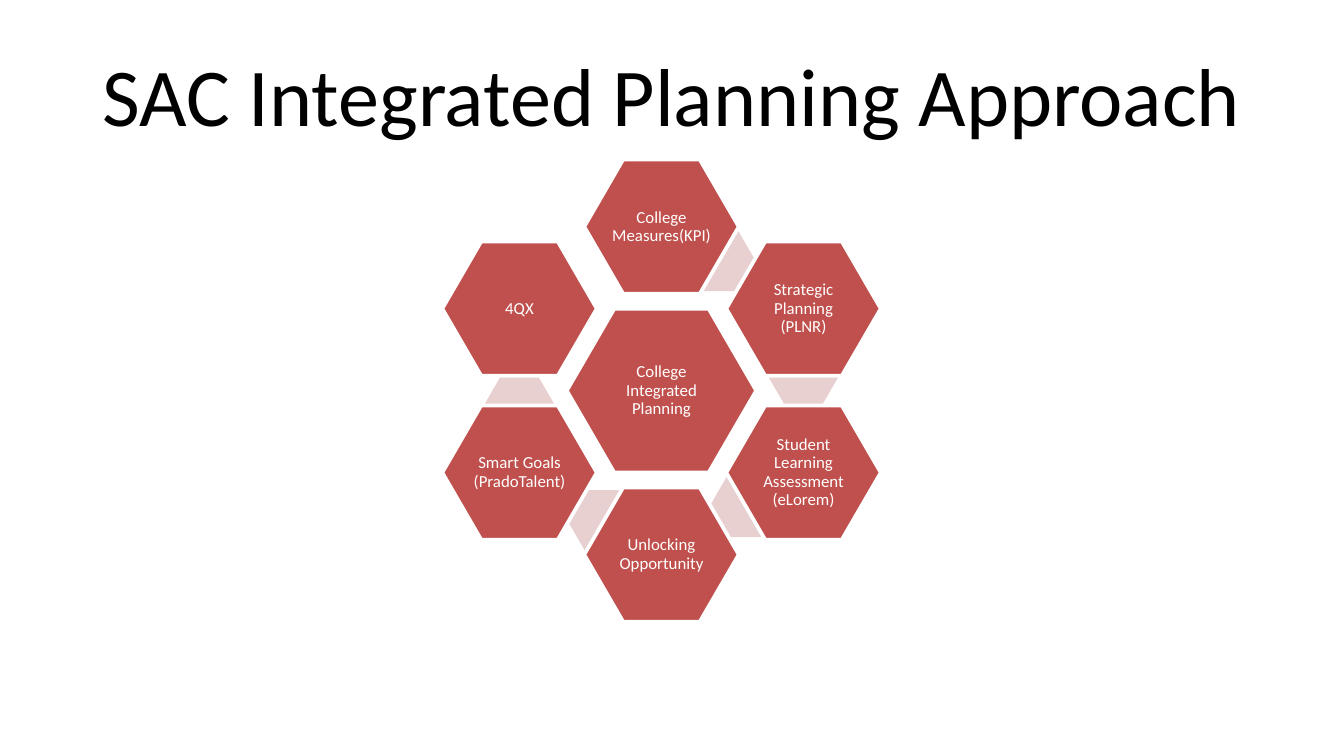
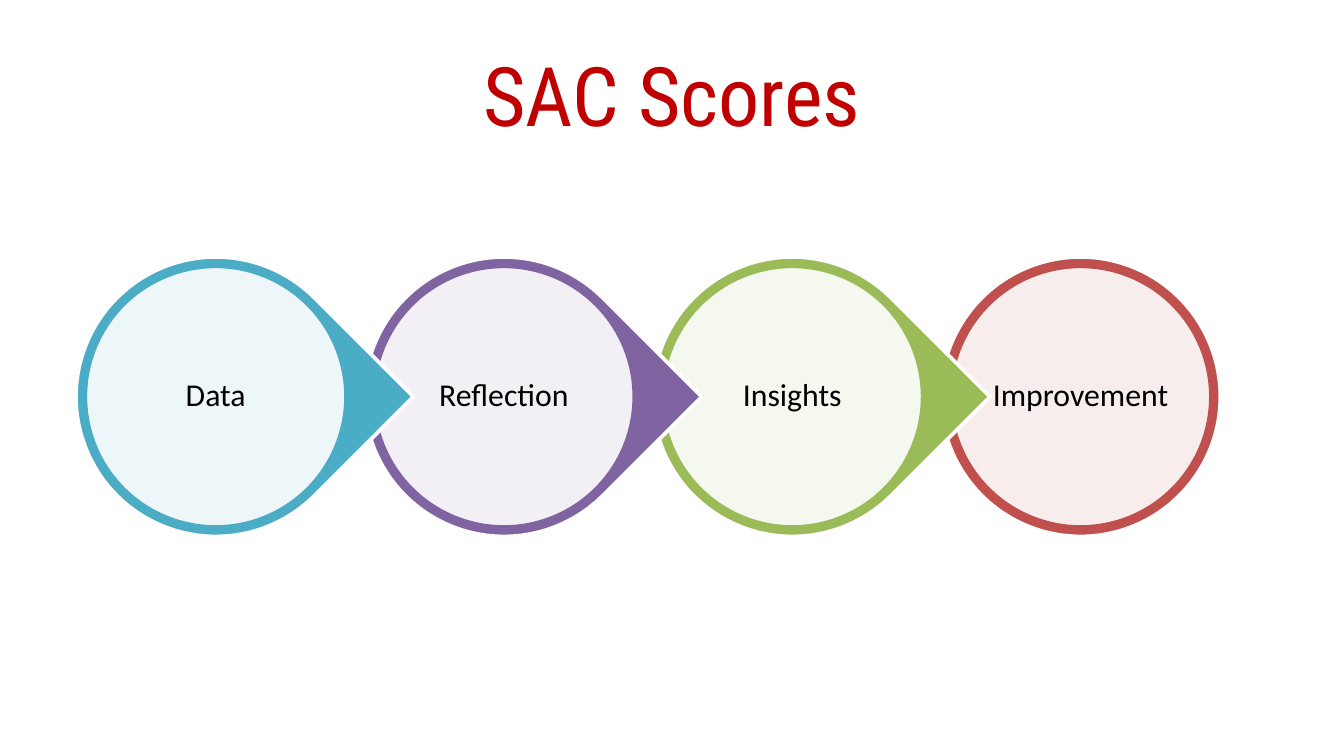
import math

import lxml.etree
import pptx
import pptx.dml.color
import pptx.enum.shapes
import pptx.enum.text
import pptx.oxml.ns
import pptx.util

WHITE = pptx.dml.color.RGBColor(0xFF, 0xFF, 0xFF)
BLACK = pptx.dml.color.RGBColor(0x00, 0x00, 0x00)
RED = pptx.dml.color.RGBColor(0xC0, 0x50, 0x4D)
PALE_RED = pptx.dml.color.RGBColor(0xE8, 0xD0, 0xD0)
GREEN = pptx.dml.color.RGBColor(0x9B, 0xBB, 0x59)
PURPLE = pptx.dml.color.RGBColor(0x80, 0x64, 0xA2)
AQUA = pptx.dml.color.RGBColor(0x4B, 0xAC, 0xC6)
DARK_RED = pptx.dml.color.RGBColor(0xC0, 0x00, 0x00)

HEXAGON = pptx.enum.shapes.MSO_SHAPE.HEXAGON
OVAL = pptx.enum.shapes.MSO_SHAPE.OVAL
TEAR = pptx.enum.shapes.MSO_SHAPE.TEAR

deck = pptx.Presentation()
deck.slide_width = pptx.util.Inches(10)
deck.slide_height = deck.slide_width * 9 // 16
CELL = deck.slide_width / 100


def write(shape, text, size=9, color=BLACK, font="Calibri", inset=0.1, spacing=1.0):
    frame = shape.text_frame
    frame.word_wrap = True
    frame.auto_size = pptx.enum.text.MSO_AUTO_SIZE.NONE
    frame.vertical_anchor = pptx.enum.text.MSO_ANCHOR.MIDDLE
    frame.margin_left = frame.margin_right = pptx.util.Inches(inset)
    frame.margin_top = frame.margin_bottom = pptx.util.Inches(min(inset, 0.05))
    frame.text = text
    paragraph = frame.paragraphs[0]
    paragraph.alignment = pptx.enum.text.PP_ALIGN.CENTER
    paragraph.line_spacing = spacing
    paragraph.font.size = pptx.util.Pt(size)
    paragraph.font.name = font
    paragraph.font.color.rgb = color


def place(slide, x, y, width, height, preset=None, fill=None, line=None):
    """Centre a shape, or a text box when there is no preset, on a grid point."""
    bounds = [round(n * CELL) for n in (x - width / 2, y - height / 2, width, height)]
    if preset is None:
        return slide.shapes.add_textbox(*bounds)
    shape = slide.shapes.add_shape(preset, *bounds)
    shape.shadow.inherit = False
    shape.fill.solid()
    shape.fill.fore_color.rgb = fill
    if line is None:
        shape.line.fill.background()
    else:
        shape.line.color.rgb = line
        shape.line.width = pptx.util.Pt(2)
    if preset == HEXAGON:
        shape.adjustments[0] = 0.29
    return shape


slides = []
for heading, color, font in (
    ("SAC Integrated Planning Approach", BLACK, "Calibri"),
    ("SAC Scores", DARK_RED, "Roboto Condensed"),
):
    slide = deck.slides.add_slide(deck.slide_layouts[5])
    title = slide.shapes.title
    title.left, title.top, title.width, title.height = (
        round(n * CELL) for n in (5, 2.3, 90, 9.4)
    )
    write(title, heading, size=44, color=color, font=font)
    slides.append(slide)
planning, scores = slides

HUB_X, HUB_Y = 49.22, 29.07
RING = 12.2
LINK = 5
place(planning, HUB_X, HUB_Y, 14.1, 12.2, HEXAGON, RED, WHITE)
hub_label = place(planning, HUB_X, HUB_Y, 9.4, 8.1)
write(hub_label, "College Integrated Planning", color=WHITE, inset=0.01, spacing=0.9)

steps = (
    "College Measures(KPI)",
    "Strategic Planning (PLNR)",
    "Student Learning Assessment (eLorem)",
    "Unlocking Opportunity",
    "Smart Goals (PradoTalent)",
    "4QX",
)
for index, step in enumerate(steps):
    angle = math.radians(60 * index - 90)
    x = HUB_X + RING * math.cos(angle)
    y = HUB_Y + RING * math.sin(angle)
    if index < len(steps) - 1:
        onward = angle + math.radians(120)
        link_x = x + LINK * math.cos(onward)
        link_y = y + LINK * math.sin(onward)
        place(planning, link_x, link_y, 5.3, 4.6, HEXAGON, PALE_RED)
    place(planning, x, y, 11.5, 10, HEXAGON, RED, WHITE)
    step_label = place(planning, x, y, 7.7, 6.7)
    write(step_label, step, color=WHITE, inset=0.01, spacing=0.9)

FIRST_X, STAGE_Y, PITCH = 16.05, 29.52, 21.45
stages = (
    ("Data", AQUA, TEAR),
    ("Reflection", PURPLE, TEAR),
    ("Insights", GREEN, TEAR),
    ("Improvement", RED, OVAL),
)
for index, (stage, color, outline) in reversed(list(enumerate(stages))):
    x = FIRST_X + PITCH * index
    rim = place(scores, x, STAGE_Y, 20.8, 20.8, outline, color, WHITE)
    if outline == TEAR:
        rim.rotation = 45
    disc = place(scores, x, STAGE_Y, 19.4, 19.4, OVAL, WHITE, color)
    tint = disc.element.xpath("./p:spPr/a:solidFill/a:srgbClr")[0]
    lxml.etree.SubElement(tint, pptx.oxml.ns.qn("a:alpha"), val="90000")
    stage_label = place(scores, x, STAGE_Y, 13.8, 13.8)
    write(stage_label, stage, size=17, inset=0.02, spacing=0.9)

deck.save("out.pptx")
